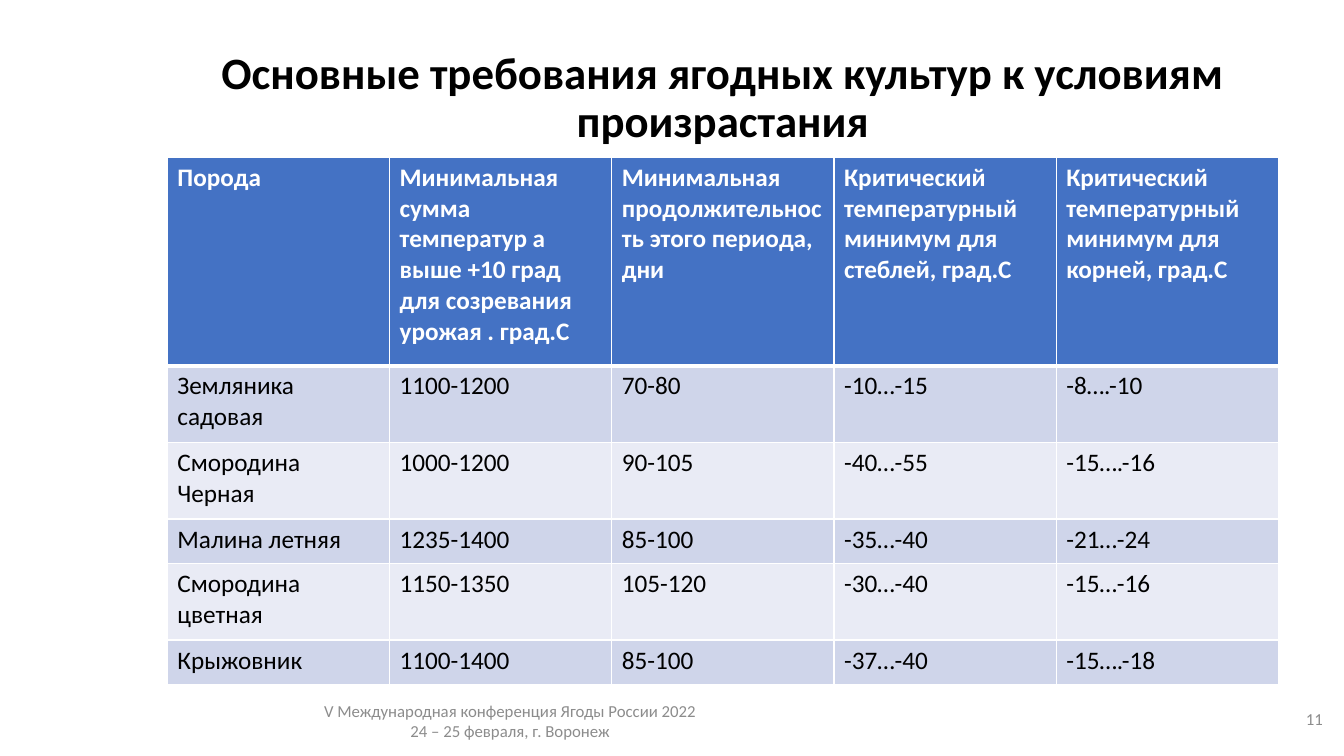
from pptx import Presentation
from pptx.dml.color import RGBColor
from pptx.enum.text import MSO_ANCHOR, PP_ALIGN
from pptx.oxml import parse_xml
from pptx.oxml.ns import nsdecls
from pptx.util import Inches, Pt

THEME = {
    "font": "Calibri",
    "title": 32, "cell": 18, "footer": 12,
    "text": "000000", "white": "FFFFFF", "muted": "8C8C8C",
    "header": "4472C4", "bands": ("CFD5EA", "E9EBF5"),
}

HEADINGS = (
    "Порода",
    "Минимальная сумма температур а выше +10 град для созревания урожая . град.С",
    "Минимальная продолжительность этого периода, дни",
    "Критический температурный минимум для стеблей, град.С",
    "Критический температурный минимум для корней, град.С",
)
CROPS = (
    ("Земляника садовая", "1100-1200", "70-80", "-10…-15", "-8….-10"),
    ("Смородина Черная", "1000-1200", "90-105", "-40…-55", "-15….-16"),
    ("Малина летняя", "1235-1400", "85-100", "-35…-40", "-21…-24"),
    ("Смородина цветная", "1150-1350", "105-120", "-30…-40", "-15…-16"),
    ("Крыжовник", "1100-1400", "85-100", "-37…-40", "-15….-18"),
)
ROW_HEIGHTS = (2.07, 0.76, 0.76, 0.44, 0.76, 0.44)


def add_run(p, text, size, color, bold=False):
    r = p.add_run()
    r.text = text
    r.font.name = THEME["font"]
    r.font.size = Pt(THEME[size])
    r.font.bold = bold
    r.font.color.rgb = RGBColor.from_string(THEME[color])


def add_text(s, box, lines, align, size, color, bold=False, spacing=1.0):
    tf = s.shapes.add_textbox(*map(Inches, box)).text_frame
    tf.word_wrap = True
    tf.vertical_anchor = MSO_ANCHOR.MIDDLE
    for i, line in enumerate(lines):
        p = tf.add_paragraph() if i else tf.paragraphs[0]
        p.alignment = align
        p.line_spacing = spacing
        add_run(p, line, size, color, bold)


prs = Presentation()
prs.slide_width = Inches(13.33)
prs.slide_height = Inches(7.5)
s = prs.slides.add_slide(prs.slide_layouts[6])

add_text(s, (1.66, 0.4, 11.02, 1.16),
         ["Основные требования ягодных культур к условиям произрастания"],
         PP_ALIGN.CENTER, "title", "text", bold=True, spacing=0.9)

rows = (HEADINGS,) + CROPS
table = s.shapes.add_table(len(rows), len(HEADINGS), Inches(1.66), Inches(1.56),
                           Inches(11.02), Inches(sum(ROW_HEIGHTS))).table
for row, height in zip(table.rows, ROW_HEIGHTS):
    row.height = Inches(height)

for i, values in enumerate(rows):
    is_header = i == 0
    fill = THEME["header"] if is_header else THEME["bands"][(i - 1) % 2]
    for j, value in enumerate(values):
        cell = table.cell(i, j)
        add_run(cell.text_frame.paragraphs[0], value, "cell",
                "white" if is_header else "text", is_header)
        tcPr = cell._tc.get_or_add_tcPr()
        for side in ("lnL", "lnR", "lnT", "lnB"):
            thick = (i, side) in ((0, "lnB"), (1, "lnT"))
            tcPr.append(parse_xml(
                f'<a:{side} {nsdecls("a")} w="{Pt(3 if thick else 1)}"><a:solidFill>'
                f'<a:srgbClr val="{THEME["white"]}"/></a:solidFill></a:{side}>'))
        cell.fill.solid()
        cell.fill.fore_color.rgb = RGBColor.from_string(fill)

add_text(s, (2.12, 6.95, 5.88, 0.4),
         ["V Международная конференция Ягоды России 2022", "24 – 25 февраля, г. Воронеж"],
         PP_ALIGN.CENTER, "footer", "muted")
add_text(s, (12.42, 6.93, 0.8, 0.4), ["11"], PP_ALIGN.RIGHT, "footer", "muted")

prs.save("out.pptx")
